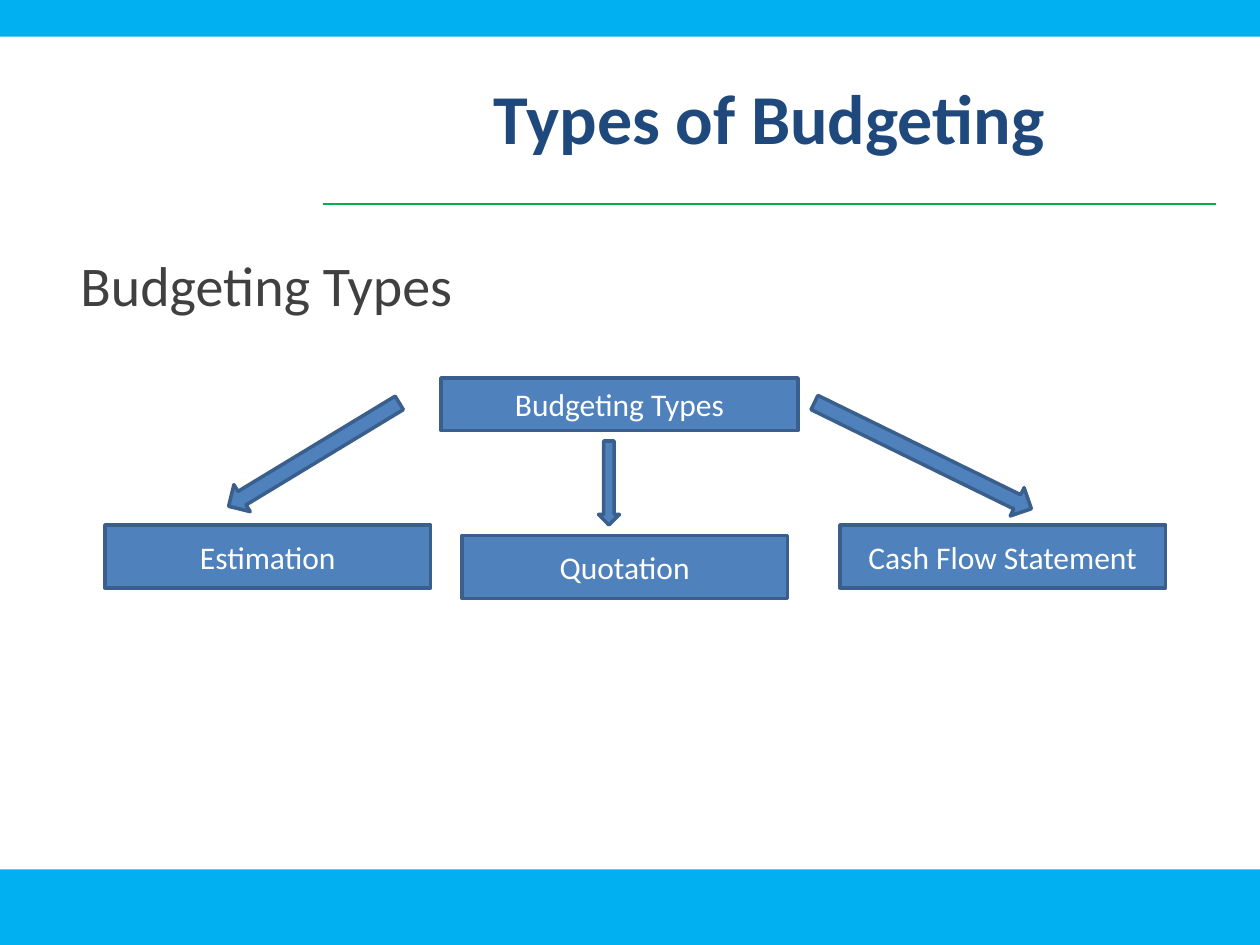
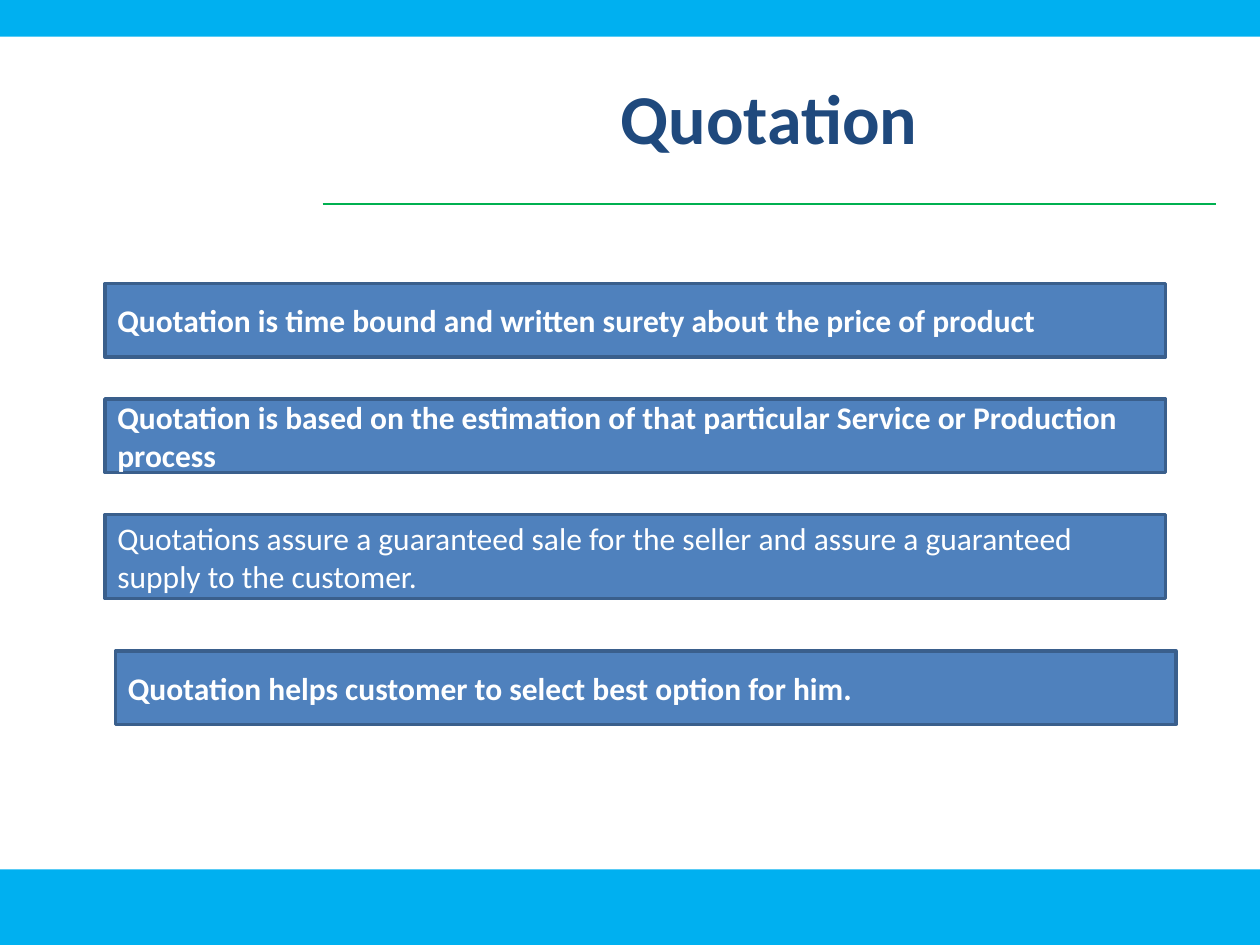
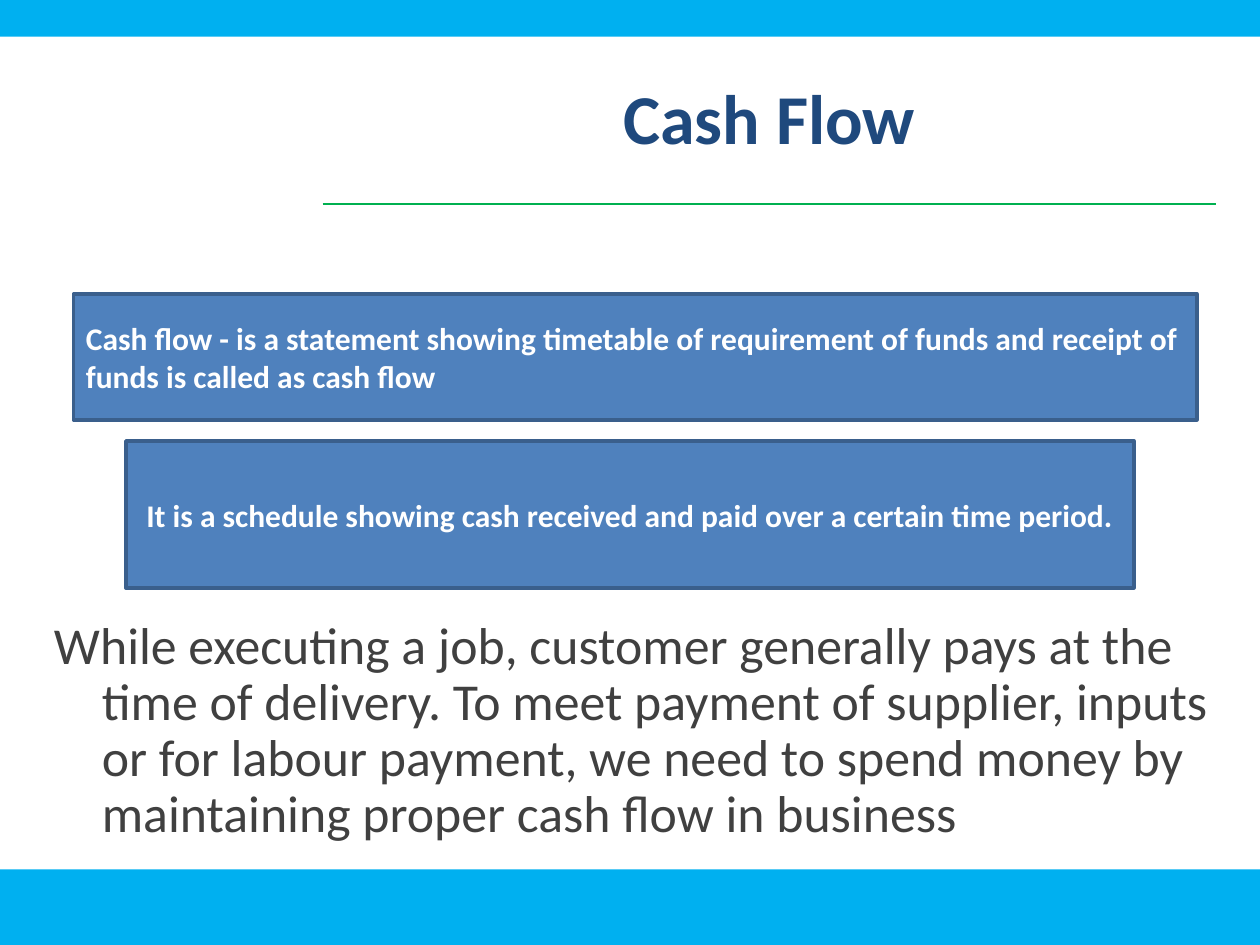
from lxml.etree import SubElement
from pptx import Presentation
from pptx.dml.color import RGBColor
from pptx.enum.shapes import MSO_CONNECTOR, MSO_SHAPE
from pptx.enum.text import MSO_ANCHOR, PP_ALIGN
from pptx.oxml.ns import qn
from pptx.util import Inches, Pt

# Shared look
FONT = "Calibri"
BAND, RULE, TITLE, BODY = "00B0F0", "00B050", "1F497D", "404040"
BOX, EDGE, WHITE = "4F81BD", "3A5F8C", "FFFFFF"
WIDTH, HEIGHT = 10, 7.5
TOP_BAND, BOTTOM_BAND = 0.29, 0.6
HEAD_LEFT, HEAD_WIDTH, RULE_Y = 2.56, 7.09, 1.62
CELL = 1 / 12  # grid step in inches
HANG = 0.38
LEFT, CENTER = PP_ALIGN.LEFT, PP_ALIGN.CENTER

# Content: boxes are (text, bold, align, (column, row, columns, rows)),
# arrows are (shape, rotation, (column, row, columns, rows)),
# body texts are (text, size, line spacing, (left, top, width, height) in inches)
SLIDES = [
    {
        "title": "Types of Budgeting",
        "body": ("Budgeting Types", 32, 1, (0.54, 1.94, 8.82, 2.63)),
        "boxes": [
            ("Budgeting Types", False, CENTER, (42, 36, 34, 5)),
            ("Estimation", False, CENTER, (10, 50, 31, 6)),
            ("Quotation", False, CENTER, (44, 51, 31, 6)),
            ("Cash Flow Statement", False, CENTER, (80, 50, 31, 6)),
        ],
        "arrows": [
            (MSO_SHAPE.DOWN_ARROW, 0, (57, 42, 2, 8)),
            (MSO_SHAPE.LEFT_ARROW, 328.8, (20.4, 41.8, 19, 3)),
            (MSO_SHAPE.RIGHT_ARROW, 26.1, (76.4, 41.9, 23, 3)),
        ],
    },
    {
        "title": "Quotation",
        "boxes": [
            ("Quotation is time bound and written surety about the price of product",
             True, LEFT, (10, 27, 101, 7)),
            ("Quotation is based on the estimation of that particular Service or "
             "Production process", True, LEFT, (10, 38, 101, 7)),
            ("Quotations assure a guaranteed sale for the seller and assure a "
             "guaranteed supply to the customer.", False, LEFT, (10, 49, 101, 8)),
            ("Quotation helps customer to select best option for him.",
             True, LEFT, (11, 62, 101, 7)),
        ],
    },
    {
        "title": "Cash Flow",
        "boxes": [
            ("Cash flow - is a statement showing timetable of requirement of funds "
             "and receipt of funds is called as cash flow",
             True, LEFT, (7, 28, 107, 12)),
            ("It is a schedule showing cash received and paid over a certain time "
             "period.", True, CENTER, (12, 42, 96, 14)),
        ],
        "body": ("While executing a job, customer generally pays at the time of "
                 "delivery. To meet payment of supplier, inputs or for labour payment, "
                 "we need to spend money by maintaining proper cash flow in business",
                 29.6, 0.9, (0.33, 4.87, 9.42, 2.05)),
    },
]


def rgb(color):
    return RGBColor.from_string(color)


def inches(place):
    return [Inches(v) for v in place]


def on_grid(place):
    return [v * CELL for v in place]


def write(sp, text, size, color, bold=False, align=LEFT, anchor=MSO_ANCHOR.MIDDLE):
    tf = sp.text_frame
    tf.word_wrap = True
    tf.vertical_anchor = anchor
    p = tf.paragraphs[0]
    p.alignment = align
    r = p.add_run()
    r.text = text
    r.font.name, r.font.size, r.font.bold = FONT, Pt(size), bold
    r.font.color.rgb = rgb(color)
    return p


def add_shape(s, kind, place, fill, edge=None):
    sp = s.shapes.add_shape(kind, *inches(place))
    sp.shadow.inherit = False
    sp.fill.solid()
    sp.fill.fore_color.rgb = rgb(fill)
    if edge:
        sp.line.color.rgb = rgb(edge)
        sp.line.width = Pt(2)
    else:
        sp.line.fill.background()
    return sp


def add_frame(s, title):
    """Bands, rule and title found on every slide."""
    for top, height in ((HEIGHT - BOTTOM_BAND, BOTTOM_BAND), (0, TOP_BAND)):
        add_shape(s, MSO_SHAPE.RECTANGLE, (0, top, WIDTH, height), BAND)
    rule = s.shapes.add_connector(MSO_CONNECTOR.STRAIGHT, *inches(
        (HEAD_LEFT, RULE_Y, HEAD_LEFT + HEAD_WIDTH, RULE_Y)))
    rule.line.color.rgb = rgb(RULE)
    rule.line.width = Pt(0.75)
    SubElement(rule._element.spPr, qn("a:effectLst"))
    sp = s.shapes.add_textbox(*inches((HEAD_LEFT, 0.3, HEAD_WIDTH, 1.25)))
    write(sp, title, 40, TITLE, True, CENTER)


def add_body(s, text, size, spacing, place):
    sp = s.shapes.add_textbox(*inches(place))
    p = write(sp, text, size, BODY, anchor=MSO_ANCHOR.TOP)
    p.line_spacing = spacing
    pPr = p._p.get_or_add_pPr()
    pPr.set("marL", str(Inches(HANG)))
    pPr.set("indent", str(-Inches(HANG)))


def main():
    prs = Presentation()
    prs.slide_width, prs.slide_height = Inches(WIDTH), Inches(HEIGHT)
    for content in SLIDES:
        s = prs.slides.add_slide(prs.slide_layouts[6])
        add_frame(s, content["title"])
        if "body" in content:
            add_body(s, *content["body"])
        for text, bold, align, place in content["boxes"]:
            sp = add_shape(s, MSO_SHAPE.RECTANGLE, on_grid(place), BOX, EDGE)
            write(sp, text, 18, WHITE, bold, align)
        for kind, rotation, place in content.get("arrows", []):
            sp = add_shape(s, kind, on_grid(place), BOX, EDGE)
            sp.rotation = rotation
    prs.save("out.pptx")


if __name__ == "__main__":
    main()
